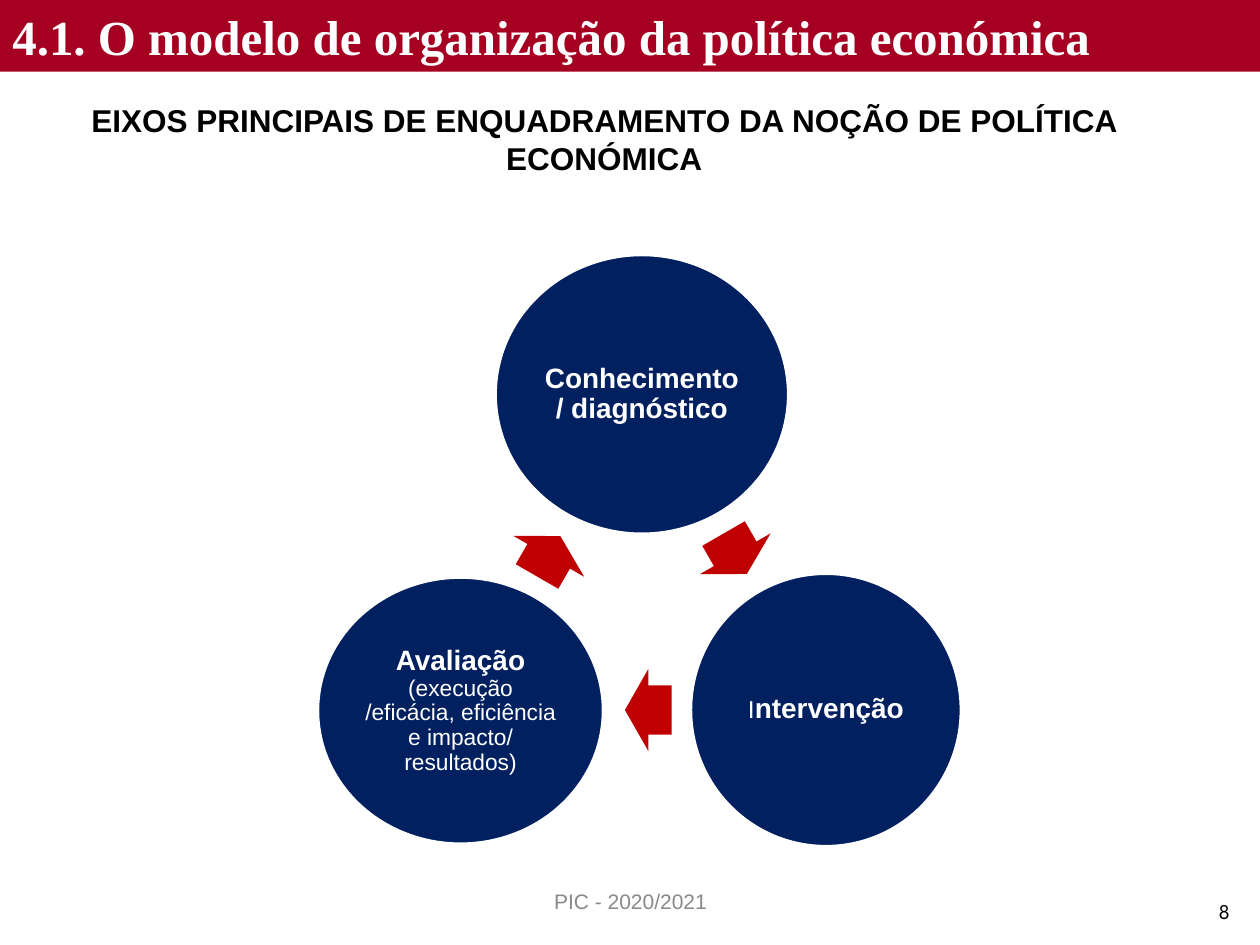
import pptx
import pptx.util
import pptx.dml.color
import pptx.enum.shapes
import pptx.enum.text

SCALE = 9144
SHAPE = pptx.enum.shapes.MSO_SHAPE
ALIGN = pptx.enum.text.PP_ALIGN
ANCHOR = pptx.enum.text.MSO_ANCHOR
NAVY, RED, CRIMSON = "002060", "C00000", "A50021"
WHITE, BLACK, GREY = "FFFFFF", "000000", "898989"


def px(n):
    """Turn px into EMU."""
    return pptx.util.Emu(n * SCALE)


def color(code):
    """Turn a hex string into a colour."""
    return pptx.dml.color.RGBColor.from_string(code)


def add_shape(s, kind, box, fill, line=None, rotation=0):
    """Add a flat preset shape."""
    sp = s.shapes.add_shape(kind, *map(px, box))
    sp.shadow.inherit = False
    sp.rotation = rotation
    sp.fill.solid()
    sp.fill.fore_color.rgb = color(fill)
    if line:
        sp.line.color.rgb = color(line)
        sp.line.width = pptx.util.Pt(2)
    else:
        sp.line.fill.background()
    return sp


def write(sp, runs, font="Arial", code=BLACK, align=ALIGN.CENTER,
          anchor=ANCHOR.TOP, margins=(10, 5), spacing=None):
    """Write (text, size, bold) runs as one paragraph."""
    tf = sp.text_frame
    tf.word_wrap = True
    tf.vertical_anchor = anchor
    tf.margin_left = tf.margin_right = px(margins[0])
    tf.margin_top = tf.margin_bottom = px(margins[1])
    p = tf.paragraphs[0]
    p.alignment = align
    p.line_spacing = spacing
    for text, size, bold in runs:
        r = p.add_run()
        r.text = text
        r.font.name = font
        r.font.size = pptx.util.Pt(size)
        r.font.bold = bold
        r.font.color.rgb = color(code)


def add_text(s, box, runs, **fmt):
    """Add a text box."""
    write(s.shapes.add_textbox(*map(px, box)), runs, **fmt)


def add_header(s, x, y, w, h):
    """Place the title band and the heading under it."""
    band = add_shape(s, SHAPE.RECTANGLE, (x, y, w, h), CRIMSON)
    write(band, [("4.1. O modelo de organização da política económica", 28, True)],
          font="Times New Roman", code=WHITE, align=ALIGN.LEFT)
    add_text(s, (x + 42, y + h + 18, w - 125, 71),
             [("EIXOS PRINCIPAIS DE ENQUADRAMENTO DA NOÇÃO DE POLÍTICA ECONÓMICA",
               18, True)])


def add_cycle(s, x, y):
    """Place the three stages and the arrows that link them."""
    stages = [
        ((141, 0, 233, 222), [("Conhecimento / diagnóstico", 16, True)]),
        ((296, 253, 215, 217), [("I", 14, False), ("ntervenção", 16, True)]),
        ((0, 256, 227, 212),
         [("Avaliação", 16, True),
          (" (execução /eficácia, eficiência e impacto/ resultados)", 13, False)]),
    ]
    arrows = [(313, 205), (244, 329), (165, 207)]
    for i, ((box, runs), (left, top)) in enumerate(zip(stages, arrows)):
        dx, dy, w, h = box
        sp = add_shape(s, SHAPE.OVAL, (x + dx, y + dy, w, h), NAVY, WHITE)
        write(sp, runs, code=WHITE, anchor=ANCHOR.MIDDLE, margins=(2, 2), spacing=0.9)
        arrow = add_shape(s, SHAPE.RIGHT_ARROW, (x + left, y + top, 37, 65),
                          RED, rotation=60 + 120 * i)
        arrow.adjustments[0] = 0.6
        arrow.adjustments[1] = 0.5


def add_footer(s, x, y):
    """Place the course label and the page number."""
    add_text(s, (x, y, 317, 40), [("PIC - 2020/2021", 12, False)],
             code=GREY, anchor=ANCHOR.MIDDLE)
    add_text(s, (x + 436, y + 13, 208, 25), [("8", 12, False)],
             font="League Spartan", align=ALIGN.RIGHT)


def main():
    """Build the slide."""
    prs = pptx.Presentation()
    prs.slide_width, prs.slide_height = px(1000), px(750)
    s = prs.slides.add_slide(prs.slide_layouts[6])
    add_header(s, 0, 0, 1000, 57)
    add_cycle(s, 252, 202)
    add_footer(s, 342, 695)
    prs.save("out.pptx")


if __name__ == "__main__":
    main()
